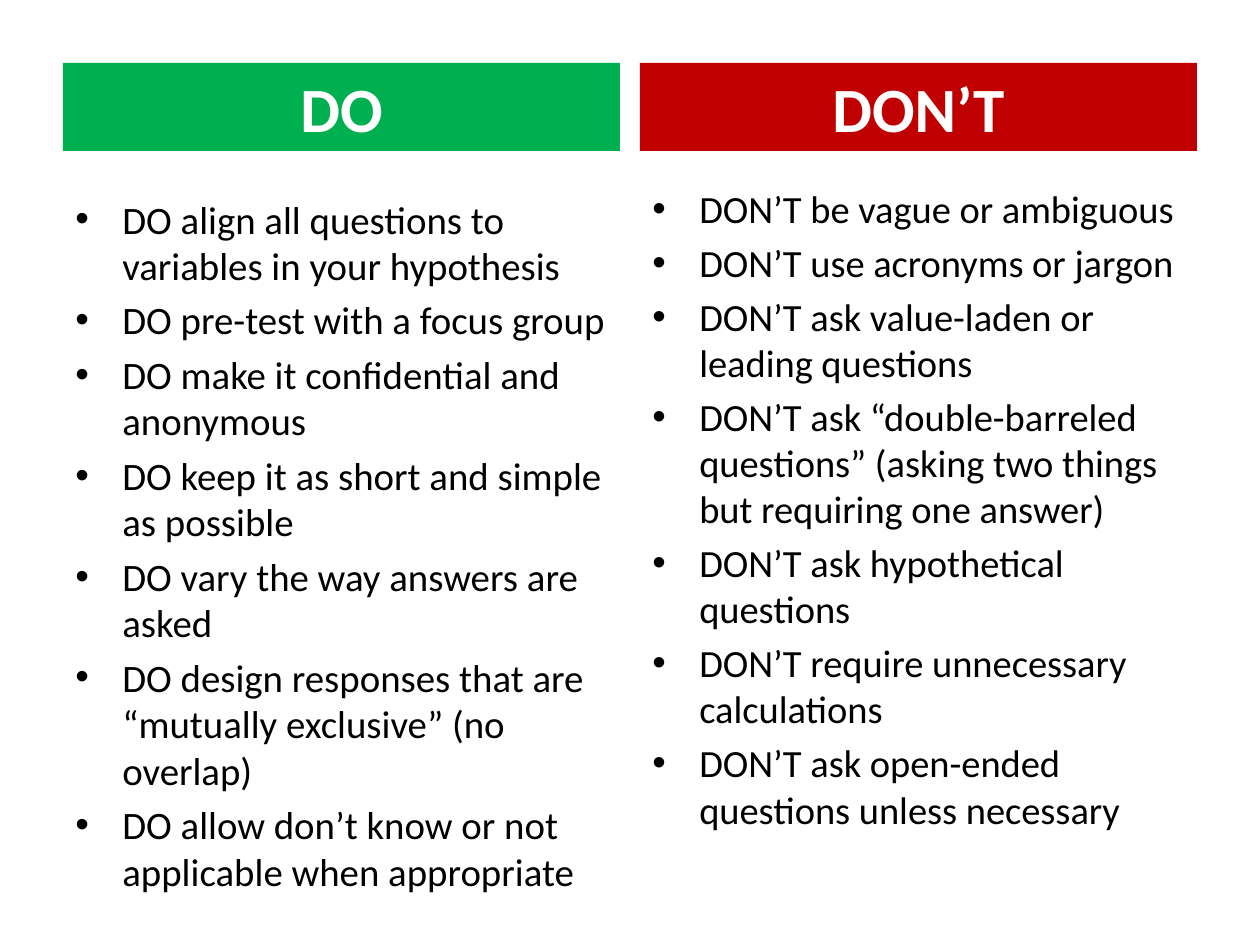
from lxml import etree
from pptx import Presentation, util as u
from pptx.dml.color import RGBColor
from pptx.enum import shapes, text
from pptx.oxml.ns import qn

SCALE = 914400 // 126
FONT = "Calibri"
HEADER_TOP, HEADER_HEIGHT = 63, 88
COLUMN_LEFT, COLUMN_WIDTH, COLUMN_GAP = 63, 557, 20
INDENT = 47

# title, header colour, list top, list height, list size, items
COLUMNS = [
    ("DO", "00B050", 189, 714, 22.2, [
        "DO align all questions to variables in your hypothesis",
        "DO pre-test with a focus group",
        "DO make it confidential and anonymous",
        "DO keep it as short and simple as possible",
        "DO vary the way answers are asked",
        "DO design responses that are “mutually exclusive” (no overlap)",
        "DO allow don’t know or not applicable when appropriate",
    ]),
    ("DON’T", "C00000", 179, 703, 22, [
        "DON’T be vague or ambiguous",
        "DON’T use acronyms or jargon",
        "DON’T ask value-laden or leading questions",
        "DON’T ask “double-barreled questions” (asking two things "
        "but requiring one answer)",
        "DON’T ask hypothetical questions",
        "DON’T require unnecessary calculations",
        "DON’T ask open-ended questions unless necessary",
    ]),
]


def px(length):
    return u.Emu(length * SCALE)


def color(hex_string):
    return RGBColor.from_string(hex_string)


def set_font(para, size, hex_string, bold=False):
    para.font.name = FONT
    para.font.size = u.Pt(size)
    para.font.bold = bold
    para.font.color.rgb = color(hex_string)
    para.space_before = u.Pt(round(size * 0.2, 1))


def add_bullet(para):
    """Give the paragraph a round bullet with a hanging indent."""
    properties = para._p.get_or_add_pPr()
    properties.set("marL", str(px(INDENT)))
    properties.set("indent", str(px(-INDENT)))
    etree.SubElement(properties, qn("a:buFont")).set("typeface", "Arial")
    etree.SubElement(properties, qn("a:buChar")).set("char", "•")


def add_header(page, left, top, width, height, title, fill):
    box = page.shapes.add_shape(shapes.MSO_SHAPE.RECTANGLE,
                                px(left), px(top), px(width), px(height))
    box.shadow.inherit = False
    box.fill.solid()
    box.fill.fore_color.rgb = color(fill)
    box.line.fill.background()
    frame = box.text_frame
    frame.vertical_anchor = text.MSO_ANCHOR.BOTTOM
    para = frame.paragraphs[0]
    para.text = title
    para.alignment = text.PP_ALIGN.CENTER
    set_font(para, 36, "FFFFFF", bold=True)


def add_list(page, left, top, width, height, items, size):
    box = page.shapes.add_textbox(px(left), px(top), px(width), px(height))
    frame = box.text_frame
    frame.word_wrap = True
    for index, item in enumerate(items):
        para = frame.add_paragraph() if index else frame.paragraphs[0]
        para.text = item
        set_font(para, size, "000000")
        add_bullet(para)


def main():
    deck = Presentation()
    deck.slide_width, deck.slide_height = u.Inches(10), u.Inches(7.5)
    page = deck.slides.add_slide(deck.slide_layouts[6])
    for index, (title, fill, top, height, size, items) in enumerate(COLUMNS):
        left = COLUMN_LEFT + index * (COLUMN_WIDTH + COLUMN_GAP)
        add_header(page, left, HEADER_TOP, COLUMN_WIDTH, HEADER_HEIGHT, title, fill)
        add_list(page, left, top, COLUMN_WIDTH, height, items, size)
    deck.save("out.pptx")


if __name__ == "__main__":
    main()
